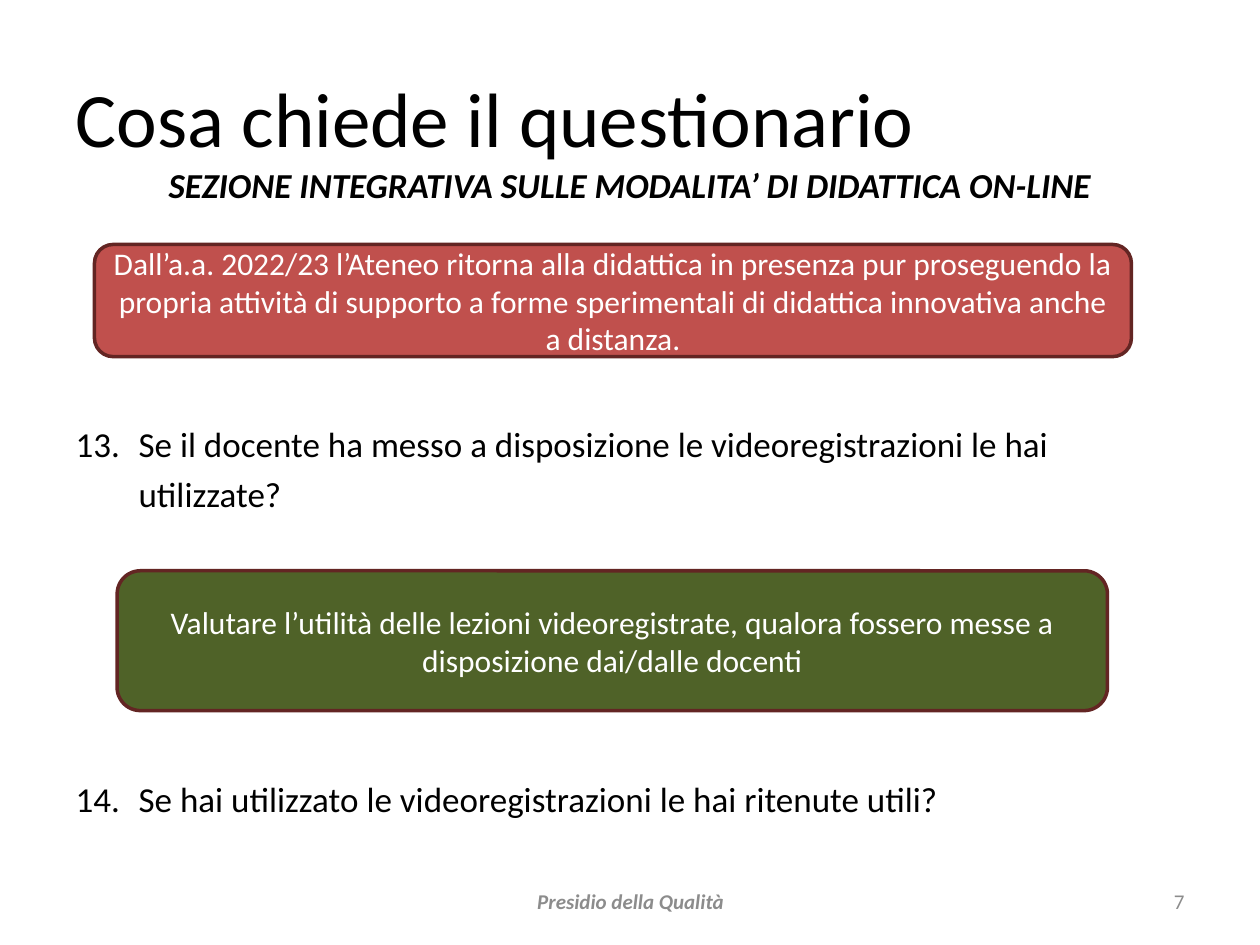
"""Build the slide on the online-teaching section of the questionnaire."""
from dataclasses import dataclass

from pptx import Presentation
from pptx.dml.color import RGBColor as RGB
from pptx.enum.shapes import MSO_SHAPE as Shape
from pptx.enum.text import MSO_ANCHOR as Anchor, MSO_AUTO_SIZE as Fit, PP_ALIGN as Align
from pptx.oxml.xmlchemy import OxmlElement as Element
from pptx.util import Inches, Pt


@dataclass(frozen=True)
class Theme:
    font: str = "Calibri"
    ink: str = "000000"
    pale: str = "FFFFFF"
    gray: str = "8C8C8C"
    red: str = "C0504D"
    green: str = "4F6228"
    edge: str = "632523"
    head: int = 44
    body: int = 20
    note: int = 18
    foot: int = 12


THEME = Theme()


def place(shape, left, top, width, height):
    shape.left, shape.top = Inches(left), Inches(top)
    shape.width, shape.height = Inches(width), Inches(height)


def set_list(para, start=None, indent=0):
    props = para._p.get_or_add_pPr()
    props.set("marL", str(Inches(indent)))
    props.set("indent", str(-Inches(indent)))
    if start is None:
        props.append(Element("a:buNone"))
        return
    face = Element("a:buFont")
    face.set("typeface", THEME.font)
    number = Element("a:buAutoNum")
    number.set("type", "arabicPeriod")
    number.set("startAt", str(start))
    props.extend([face, number])


def write(frame, text, size=THEME.body, color=THEME.ink, bold=False, italic=False,
          align=Align.LEFT, anchor=Anchor.MIDDLE, start=None, indent=0,
          before=0, lines=1.0):
    frame.word_wrap = True
    frame.auto_size = Fit.NONE
    frame.vertical_anchor = anchor
    para = frame.add_paragraph() if frame.text else frame.paragraphs[0]
    set_list(para, start, indent)
    para.alignment = align
    para.space_before = Pt(before)
    para.line_spacing = lines
    run = para.add_run()
    run.text = text
    font = run.font
    font.name, font.size = THEME.font, Pt(size)
    font.bold, font.italic = bold, italic
    font.color.rgb = RGB.from_string(color)


def add_body(shape):
    place(shape, 0.5, 1.25, 9, 5.58)
    frame = shape.text_frame
    write(frame, "SEZIONE INTEGRATIVA SULLE MODALITA’ DI DIDATTICA ON-LINE",
          bold=True, italic=True, align=Align.CENTER, anchor=Anchor.TOP)
    items = [
        ("Se il docente ha messo a disposizione le videoregistrazioni le hai utilizzate?", 119),
        ("Se hai utilizzato le videoregistrazioni le hai ritenute utili?", 145),
    ]
    for text, gap in items:
        write(frame, text, anchor=Anchor.TOP, start=13, indent=0.5, before=gap, lines=1.2)


def add_note(slide, text, box, fill):
    shape = slide.shapes.add_shape(Shape.ROUNDED_RECTANGLE, *map(Inches, box))
    shape.shadow.inherit = False
    shape.fill.solid()
    shape.fill.fore_color.rgb = RGB.from_string(fill)
    shape.line.color.rgb = RGB.from_string(THEME.edge)
    shape.line.width = Pt(2)
    write(shape.text_frame, text, size=THEME.note, color=THEME.pale, align=Align.CENTER)


def add_foot(slide, text, left, width, **look):
    box = slide.shapes.add_textbox(*map(Inches, (left, 6.95, width, 0.4)))
    write(box.text_frame, text, size=THEME.foot, color=THEME.gray, **look)


def main():
    deck = Presentation()
    deck.slide_width, deck.slide_height = Inches(10), Inches(7.5)
    slide = deck.slides.add_slide(deck.slide_layouts[1])
    title, body = slide.placeholders
    place(title, 0.5, 0.3, 6.88, 1.25)
    write(title.text_frame, "Cosa chiede il questionario", size=THEME.head)
    add_body(body)
    add_foot(slide, "Presidio della Qualità", 3.42, 3.17,
             bold=True, italic=True, align=Align.CENTER)
    add_foot(slide, "7", 7.17, 2.33, align=Align.RIGHT)
    add_note(slide, "Dall’a.a. 2022/23 l’Ateneo ritorna alla didattica in presenza pur "
             "proseguendo la propria attività di supporto a forme sperimentali di "
             "didattica innovativa anche a distanza.", (0.75, 1.94, 8.23, 0.89), THEME.red)
    add_note(slide, "Valutare l’utilità delle lezioni videoregistrate, qualora fossero "
             "messe a disposizione dai/dalle docenti", (0.93, 4.53, 7.86, 1.11), THEME.green)
    deck.save("out.pptx")


if __name__ == "__main__":
    main()
